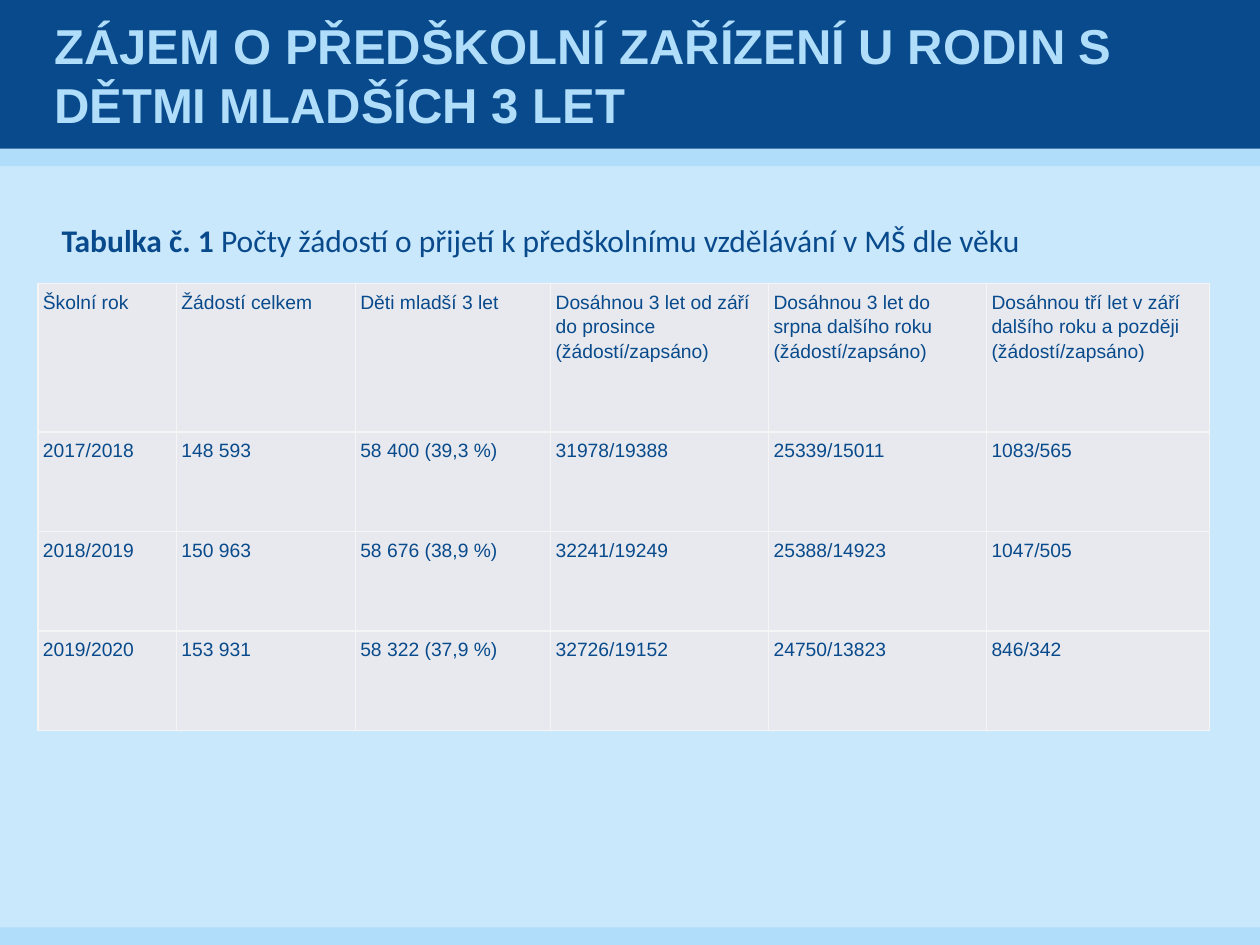
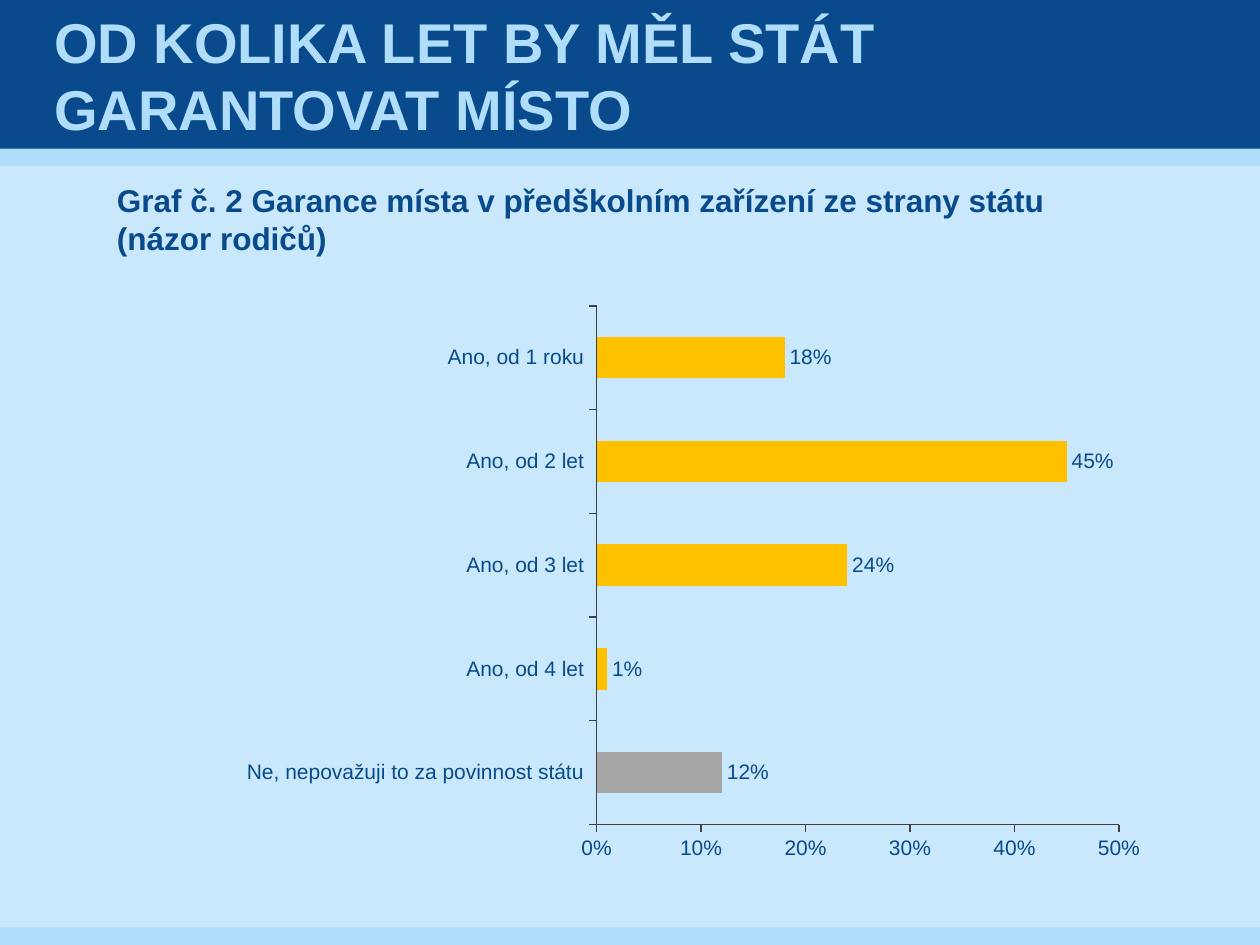
from lxml import etree
from pptx import Presentation
from pptx.chart.data import CategoryChartData
from pptx.dml.color import RGBColor
from pptx.enum.chart import XL_CHART_TYPE as ChartType, XL_LABEL_POSITION as LabelPosition
from pptx.enum.chart import XL_TICK_MARK as TickMark
from pptx.enum.shapes import MSO_SHAPE as Shape
from pptx.enum.text import MSO_ANCHOR as Anchor, PP_ALIGN as Align
from pptx.oxml import parse_xml
from pptx.oxml.ns import nsdecls, qn
from pptx.util import Inches, Pt

NAVY = RGBColor(0x08, 0x4A, 0x8B)
SKY = RGBColor(0xAF, 0xDD, 0xFA)
PALE_SKY = RGBColor(0xCA, 0xE8, 0xFC)
CELL_GREY = RGBColor(0xE7, 0xE9, 0xEE)
BORDER = RGBColor(0xF5, 0xF5, 0xF5)
YELLOW = RGBColor(0xFF, 0xC0, 0x00)
BAR_GREY = RGBColor(0xA6, 0xA6, 0xA6)
AXIS_GREY = RGBColor(0x40, 0x40, 0x40)

BANDS = [(1.18, 0.14, SKY), (0, 1.18, NAVY), (7.36, 0.14, SKY)]

deck = Presentation()
deck.slide_width = Inches(10)
deck.slide_height = Inches(7.5)


def add_text(page, left, top, width, height, runs, size, color, font="Arial"):
    box = page.shapes.add_textbox(Inches(left), Inches(top), Inches(width), Inches(height))
    box.text_frame.word_wrap = True
    para = box.text_frame.paragraphs[0]
    para.font.name = font
    para.font.size = Pt(size)
    para.font.color.rgb = color
    for text, bold in runs:
        span = para.add_run()
        span.text = text
        span.font.bold = bold
    return box.text_frame


def add_page(title, size, width):
    page = deck.slides.add_slide(deck.slide_layouts[6])
    page.background.fill.solid()
    page.background.fill.fore_color.rgb = PALE_SKY
    for top, height, color in BANDS:
        band = page.shapes.add_shape(Shape.RECTANGLE, 0, Inches(top), deck.slide_width, Inches(height))
        band.shadow.inherit = False
        band.fill.solid()
        band.fill.fore_color.rgb = color
        band.line.fill.background()
    frame = add_text(page, 0.39, 0, width, 1.18, [(title, True)], size, SKY)
    frame.vertical_anchor = Anchor.MIDDLE
    frame.margin_left = frame.margin_right = Inches(0.04)
    frame.margin_top = frame.margin_bottom = 0
    return page


page = add_page("ZÁJEM O PŘEDŠKOLNÍ ZAŘÍZENÍ U RODIN S DĚTMI MLADŠÍCH 3 LET", 28, 9.21)

column_widths = [1.1, 1.42, 1.55, 1.73, 1.73, 1.77]
row_heights = [1.18, 0.79, 0.79, 0.79]
applications = [
    ["Školní rok", "Žádostí celkem", "Děti mladší 3 let",
     "Dosáhnou 3 let od září do prosince (žádostí/zapsáno)",
     "Dosáhnou 3 let do srpna dalšího roku (žádostí/zapsáno)",
     "Dosáhnou tří let v září dalšího roku a později (žádostí/zapsáno)"],
    ["2017/2018", "148 593", "58 400 (39,3 %)", "31978/19388", "25339/15011", "1083/565"],
    ["2018/2019", "150 963", "58 676 (38,9 %)", "32241/19249", "25388/14923", "1047/505"],
    ["2019/2020", "153 931", "58 322 (37,9 %)", "32726/19152", "24750/13823", "846/342"],
]
table = page.shapes.add_table(
    len(row_heights), len(column_widths), Inches(0.3), Inches(2.25), Inches(9.3), Inches(3.54)).table
for column, width in zip(table.columns, column_widths):
    column.width = Inches(width)
for row, height in zip(table.rows, row_heights):
    row.height = Inches(height)

for row_index, texts in enumerate(applications):
    for column_index, text in enumerate(texts):
        cell = table.cell(row_index, column_index)
        cell.text = text
        cell.margin_left = cell.margin_right = cell.margin_top = cell.margin_bottom = Inches(0.04)
        para = cell.text_frame.paragraphs[0]
        long_heading = row_index == 0 and column_index > 2
        para.alignment = Align.LEFT if long_heading else Align.JUSTIFY
        para.line_spacing = 1.15
        para.space_before = Pt(6)
        para.font.name = "Arial"
        para.font.size = Pt(11)
        para.font.bold = False
        para.font.color.rgb = NAVY
        properties = cell._tc.get_or_add_tcPr()
        for side in ("lnL", "lnR", "lnT", "lnB"):
            properties.append(parse_xml(
                f'<a:{side} {nsdecls("a")} w="{Pt(1)}"><a:solidFill>'
                f'<a:srgbClr val="{BORDER}"/></a:solidFill></a:{side}>'))
        cell.fill.solid()
        cell.fill.fore_color.rgb = CELL_GREY

caption = add_text(
    page, 0.39, 1.39, 9.3, 0.71,
    [("Tabulka č. 1 ", True), ("Počty žádostí o přijetí k předškolnímu vzdělávání v MŠ dle věku", False)],
    18, NAVY, "Calibri")
caption.vertical_anchor = Anchor.BOTTOM
caption.paragraphs[0].alignment = Align.JUSTIFY

page = add_page("OD KOLIKA LET BY MĚL STÁT GARANTOVAT MÍSTO", 32, 9.33)

answers = CategoryChartData(number_format="0%")
answers.categories = [
    "Ne, nepovažuji to za povinnost státu", "Ano, od 4 let", "Ano, od 3 let", "Ano, od 2 let", "Ano, od 1 roku"]
answers.add_series("Series 1", [0.12, 0.01, 0.24, 0.45, 0.18])
chart = page.shapes.add_chart(
    ChartType.BAR_CLUSTERED, Inches(0.59), Inches(2.18), Inches(8.82), Inches(4.96), answers).chart
chart.has_legend = False
chart.has_title = False
chart.font.name = "Arial"
chart.font.size = Pt(12)
chart.font.color.rgb = NAVY

for axis in (chart.category_axis, chart.value_axis):
    axis.has_major_gridlines = False
    axis.major_tick_mark = TickMark.OUTSIDE
    axis.minor_tick_mark = TickMark.NONE
    axis.format.line.color.rgb = AXIS_GREY
    axis.format.line.width = Pt(0.75)
    axis.tick_labels.font.size = Pt(12)
chart.value_axis.minimum_scale = 0
chart.value_axis.maximum_scale = 0.5
chart.value_axis.major_unit = 0.1
chart.value_axis.tick_labels.number_format = "0%"
chart.value_axis.tick_labels.number_format_is_linked = False

plot = chart.plots[0]
plot.gap_width = 150
plot.vary_by_categories = False
series = plot.series[0]
series.format.fill.solid()
series.format.fill.fore_color.rgb = YELLOW
refusal = series.points[0].format.fill
refusal.solid()
refusal.fore_color.rgb = BAR_GREY
labels = series.data_labels
labels.show_value = True
labels.position = LabelPosition.OUTSIDE_END
labels.number_format = "0%"
labels.number_format_is_linked = False
labels.font.size = Pt(12)
labels.font.color.rgb = NAVY

plot_area = chart._chartSpace.chart.plotArea
for old_layout in plot_area.findall(qn("c:layout")):
    plot_area.remove(old_layout)
layout = etree.Element(qn("c:layout"))
manual = etree.SubElement(layout, qn("c:manualLayout"))
for tag, value in [("layoutTarget", "inner"), ("xMode", "edge"), ("yMode", "edge"),
                   ("x", 0.47), ("y", 0.05), ("w", 0.47), ("h", 0.83)]:
    etree.SubElement(manual, qn(f"c:{tag}"), val=str(value))
plot_area.insert(0, layout)

add_text(page, 0.83, 1.39, 8.03, 0.71,
         [("Graf č. 2 Garance místa v předškolním zařízení ze strany státu (názor rodičů)", True)], 18, NAVY)

deck.save("out.pptx")
